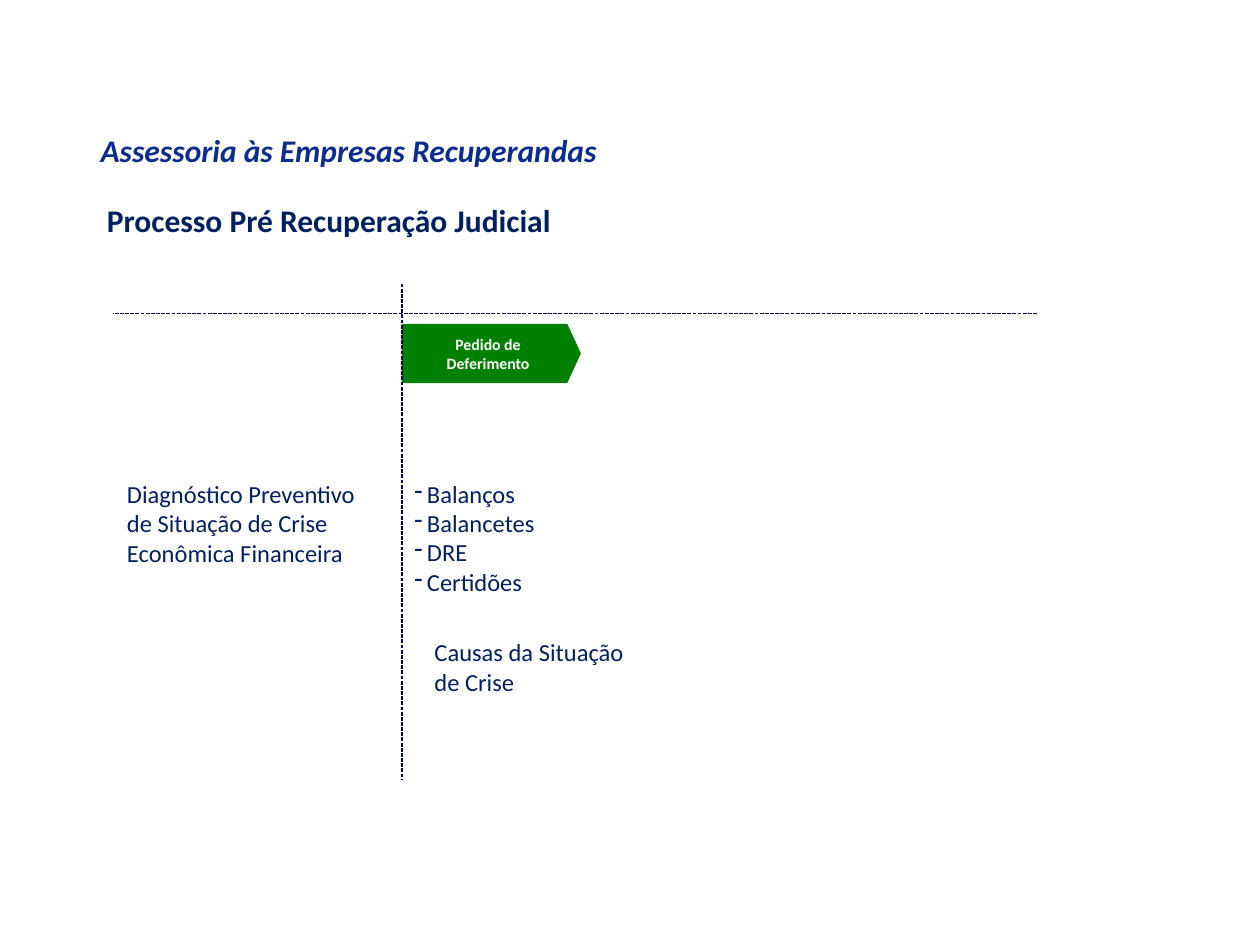
from lxml import etree
from pptx import Presentation
from pptx import util as u
from pptx.dml import color
from pptx.enum import dml, shapes, text
from pptx.oxml import ns

COLORS = {"title": "0C2D8F", "body": "002060", "line": "000066",
          "stage": "008000", "white": "FFFFFF"}
FONT = "Calibri"


def format_text(frame, size, color_name, bold=False, italic=False):
    for paragraph in frame.paragraphs:
        for run in paragraph.runs:
            run.font.name = FONT
            run.font.size = u.Pt(size)
            run.font.bold = bold
            run.font.italic = italic
            run.font.color.rgb = color.RGBColor.from_string(COLORS[color_name])


def add_text(box, content, size, color_name, bold=False, italic=False, wrap=True):
    frame = slide.shapes.add_textbox(*map(u.Inches, box)).text_frame
    frame.word_wrap = wrap
    frame.text = content
    format_text(frame, size, color_name, bold, italic)
    return frame


presentation = Presentation()
presentation.slide_width = u.Inches(10)
presentation.slide_height = u.Inches(7.5)
slide = presentation.slides.add_slide(presentation.slide_layouts[6])

# Title
add_text((0.7, 0.99, 8.55, 0.4), "Assessoria às Empresas Recuperandas",
         18, "title", bold=True, italic=True)

# Stage arrow
stage = slide.shapes.add_shape(shapes.MSO_SHAPE.PENTAGON, u.Inches(3.19),
                               u.Inches(2.57), u.Inches(1.42), u.Inches(0.47))
stage.adjustments[0] = 0.23
stage.shadow.inherit = False
stage.fill.solid()
stage.fill.fore_color.rgb = color.RGBColor.from_string(COLORS["stage"])
stage.line.fill.background()
stage.text_frame.text = "Pedido de Deferimento"
stage.text_frame.word_wrap = True
stage.text_frame.vertical_anchor = text.MSO_ANCHOR.MIDDLE
stage.text_frame.paragraphs[0].alignment = text.PP_ALIGN.CENTER
format_text(stage.text_frame, 9, "white", bold=True)

# Dashed vertical and horizontal dividers
for ends in ((3.19, 2.25, 3.19, 6.19), (8.23, 2.49, 0.9, 2.49)):
    divider = slide.shapes.add_connector(shapes.MSO_CONNECTOR.STRAIGHT,
                                         *map(u.Inches, ends))
    divider.line.color.rgb = color.RGBColor.from_string(COLORS["line"])
    divider.line.width = u.Pt(0.75)
    divider.line.dash_style = dml.MSO_LINE.SQUARE_DOT
    etree.SubElement(divider.element.spPr, ns.qn("a:effectLst"))

# Subtitle
add_text((0.75, 1.55, 3.75, 0.4), "Processo Pré Recuperação Judicial",
         18, "body", bold=True, wrap=False)

# Diagnosis column
add_text((0.91, 3.75, 2.13, 0.81),
         "Diagnóstico Preventivo de Situação de Crise Econômica Financeira",
         14, "body")

# Required documents, with dash bullets
documents = add_text((3.19, 3.75, 1.81, 1.04),
                     "\n".join(("Balanços", "Balancetes", "DRE", "Certidões")),
                     14, "body")
for paragraph in documents.paragraphs:
    properties = paragraph._p.get_or_add_pPr()
    properties.set("marL", str(u.Inches(0.1)))
    properties.set("indent", str(-u.Inches(0.1)))
    etree.SubElement(properties, ns.qn("a:buChar"), char="-")

# Causes of the crisis
add_text((3.35, 5.01, 1.7, 0.57), "Causas da Situação de Crise", 14, "body")

presentation.save("out.pptx")
